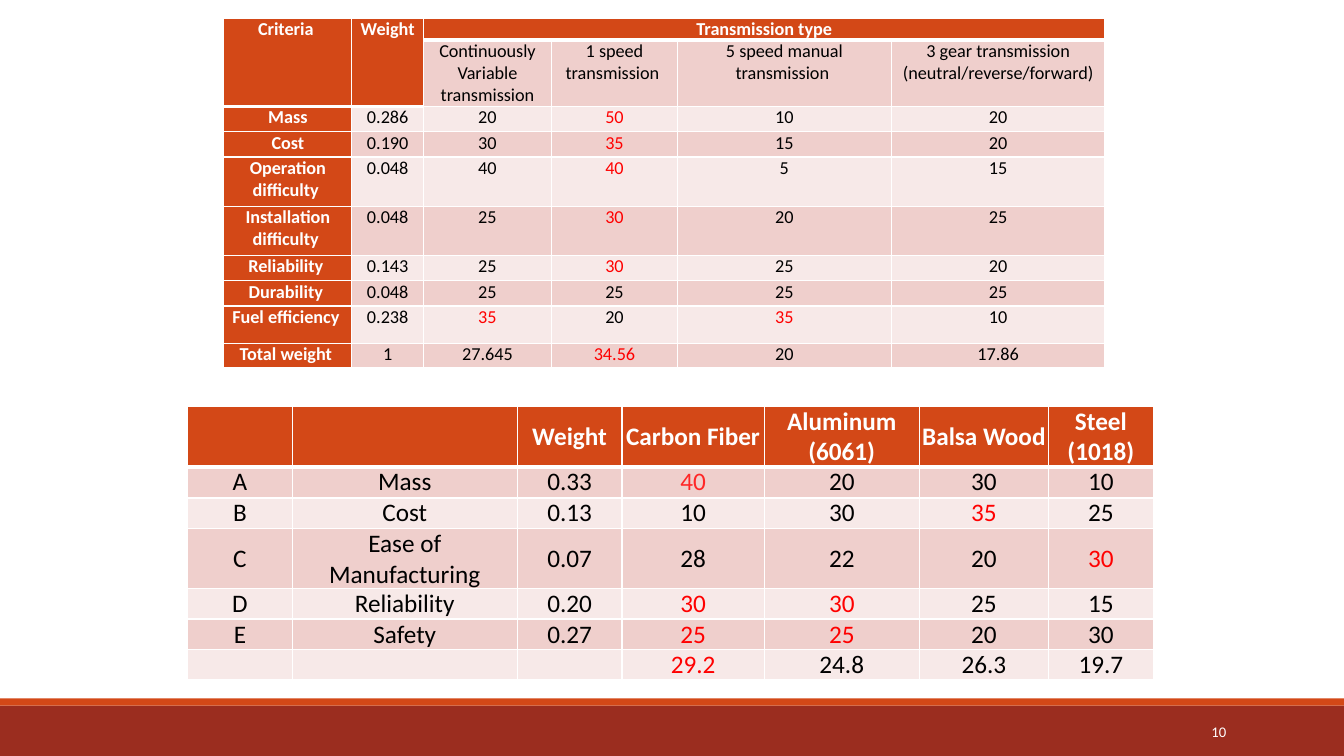
from lxml.etree import SubElement
from pptx import Presentation
from pptx.dml.color import RGBColor
from pptx.enum.shapes import MSO_SHAPE
from pptx.enum.text import MSO_ANCHOR, PP_ALIGN
from pptx.oxml.ns import qn
from pptx.util import Inches, Pt

COLORS = {
    "head": "D34817", "foot": "9B2D1F", "dark": "EFCFCC", "light": "F7E9E8",
    "white": "FFFFFF", "black": "000000", "best": "FF0000", "mass": "FF2727",
}
GEARS = [
    "Criteria |Weight|Transmission type|||",
    "||Continuously Variable transmission|1 speed transmission |"
    "5 speed manual transmission |3 gear transmission (neutral/reverse/forward)",
    "Mass|0.286|20|*50|10|20",
    "Cost|0.190|30|*35|15|20",
    "Operation difficulty |0.048|40|*40|5|15",
    "Installation difficulty |0.048|25|*30|20|25",
    "Reliability |0.143|25|*30|25|20",
    "Durability |0.048|25|25|25|25",
    "Fuel efficiency |0.238|*35|20|*35|10",
    "Total weight |1|27.645|*34.56|20|17.86",
]
STUFF = [
    "||Weight|Carbon Fiber|Aluminum (6061)|Balsa Wood|Steel (1018)",
    "A|Mass|0.33|*40|20|30|10",
    "B|Cost|0.13|10|30|*35|25",
    "C|Ease of Manufacturing|0.07|28|22|20|*30",
    "D|Reliability|0.20|*30|*30|25|15",
    "E|Safety|0.27|*25|*25|20|30",
    "|||*29.2|24.8|26.3|19.7",
]


def tint(name):
    """Return the named colour."""
    return RGBColor.from_string(COLORS[name])


def style(frame, size, color, bold=False, align=PP_ALIGN.CENTER):
    """Format all text in a frame."""
    for para in frame.paragraphs:
        para.alignment = align
        para.font.size = Pt(size)
        for run in para.runs:
            run.font.name = "Calibri"
            run.font.size = Pt(size)
            run.font.bold = bold
            run.font.color.rgb = tint(color)


def add_edge(cell, side, width):
    """Draw one white border of a cell."""
    line = SubElement(cell._tc.get_or_add_tcPr(), qn(f"a:ln{side}"), w=str(Pt(width)))
    fill = SubElement(line, qn("a:solidFill"))
    SubElement(fill, qn("a:srgbClr"), val=COLORS["white"])


def fill_cell(cell, text, size, pad, anchor, head, band, thick, top):
    """Set the text, borders and fill of a cell."""
    cell.text_frame.text = text.lstrip("*")
    color = "white" if head else "best" if text.startswith("*") else "black"
    style(cell.text_frame, size, color, head)
    cell.margin_left = cell.margin_right = Inches(pad)
    cell.margin_top = cell.margin_bottom = Inches(0)
    cell.vertical_anchor = anchor
    for side in "LRTB" if top else "LRB":
        add_edge(cell, side, 3 if side == "B" and thick else 1)
    cell.fill.solid()
    cell.fill.fore_color.rgb = tint("head" if head else band)


def add_grid(slide, box, lines, wide, tall, size, pad, anchor, side):
    """Add a banded table, with a coloured first column if side is set."""
    frame = slide.shapes.add_table(len(tall), len(wide), *map(Inches, box))
    grid = frame.table
    for col, width in zip(grid.columns, wide):
        col.width = Inches(width)
    for r, (line, height) in enumerate(zip(lines, tall)):
        grid.rows[r].height = Inches(height)
        for c, text in enumerate(line.split("|")):
            head = r == 0 or (side and c == 0)
            thick = r == 0 or (side and r == 1 and c < 2)
            band = "dark" if r % 2 else "light"
            fill_cell(grid.cell(r, c), text, size, pad, anchor, head, band, thick, r == 0)
    return grid


def add_bar(slide, top, height, color):
    """Add a full-width footer bar."""
    bar = slide.shapes.add_shape(
        MSO_SHAPE.RECTANGLE, Inches(0), Inches(top), Inches(13.33), Inches(height))
    bar.shadow.inherit = False
    bar.fill.solid()
    bar.fill.fore_color.rgb = tint(color)
    bar.line.fill.background()


def add_page(slide, text):
    """Add the page number."""
    box = slide.shapes.add_textbox(Inches(10.83), Inches(7.06), Inches(1.43), Inches(0.4))
    frame = box.text_frame
    frame.word_wrap = True
    frame.vertical_anchor = MSO_ANCHOR.MIDDLE
    frame.text = text
    style(frame, 10.5, "white", align=PP_ALIGN.RIGHT)


def main():
    """Build the slide and save it."""
    deck = Presentation()
    deck.slide_width, deck.slide_height = Inches(13.33), Inches(7.5)
    slide = deck.slides.add_slide(deck.slide_layouts[6])
    add_bar(slide, 7, 0.5, "foot")
    add_bar(slide, 6.93, 0.07, "head")
    add_page(slide, "10")
    gears = add_grid(
        slide, (2.22, 0.18, 8.76, 3.44), GEARS, [1.27, 0.71, 1.27, 1.25, 2.12, 2.12],
        [0.2, 0.66, 0.25, 0.25, 0.49, 0.49, 0.25, 0.25, 0.37, 0.24],
        13, 0.05, MSO_ANCHOR.TOP, True)
    for c in range(2):
        gears.cell(0, c).merge(gears.cell(1, c))
    gears.cell(0, 2).merge(gears.cell(0, 5))
    stuff = add_grid(
        slide, (1.86, 4.03, 9.56, 2.71), STUFF, [1.04, 2.23, 1.04, 1.41, 1.54, 1.28, 1.04],
        [0.46, 0.31, 0.3, 0.45, 0.3, 0.3, 0.3], 18, 0, MSO_ANCHOR.MIDDLE, False)
    style(stuff.cell(1, 3).text_frame, 18, "mass")
    deck.save("out.pptx")


if __name__ == "__main__":
    main()
